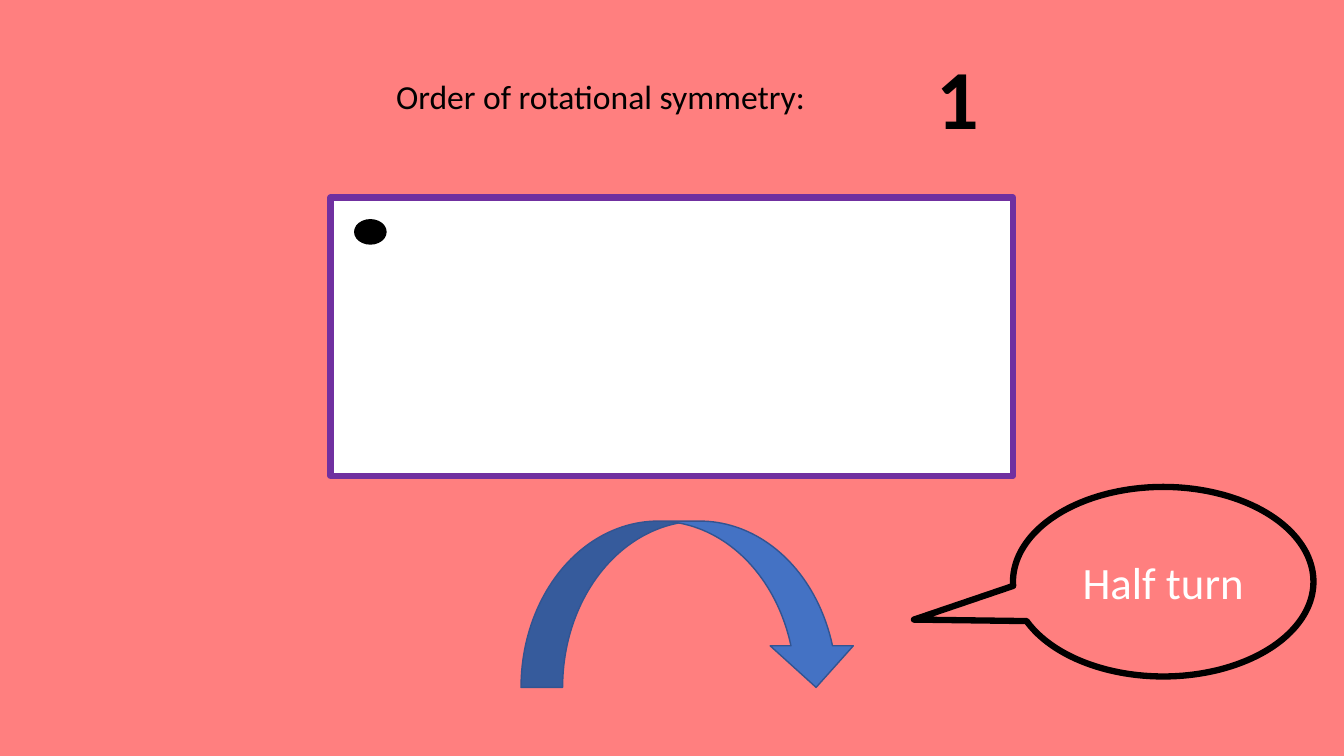
"""Build a slide on the order of rotational symmetry of a marked rectangle."""
from dataclasses import dataclass

import pptx
import pptx.dml.color
import pptx.enum.shapes
import pptx.enum.text
import pptx.util

Pt = pptx.util.Pt
SHAPE = pptx.enum.shapes.MSO_SHAPE
ALIGN = pptx.enum.text.PP_ALIGN
ANCHOR = pptx.enum.text.MSO_ANCHOR


@dataclass(frozen=True)
class Theme:
    font: str = "Calibri"
    background: str = "FF7F7F"
    ink: str = "000000"
    paper: str = "FFFFFF"
    border: str = "7030A0"
    arrow: str = "4472C4"
    arrow_edge: str = "325491"
    label_size: int = 24
    callout_size: int = 32
    answer_size: int = 60
    thin: float = 1
    thick: float = 4.5


def rgb(code):
    return pptx.dml.color.RGBColor.from_string(code)


class SlideBuilder:
    def __init__(self, slide, theme):
        self.slide = slide
        self.theme = theme
        fill = slide.background.fill
        fill.solid()
        fill.fore_color.rgb = rgb(theme.background)

    def group(self):
        return self.slide.shapes.add_group_shape().shapes

    def shape(self, kind, box, fill, edge, weight, parent=None):
        holder = self.slide.shapes if parent is None else parent
        shape = holder.add_shape(kind, *map(Pt, box))
        shape.shadow.inherit = False
        if fill is None:
            shape.fill.background()
        else:
            shape.fill.solid()
            shape.fill.fore_color.rgb = rgb(fill)
        shape.line.color.rgb = rgb(edge)
        shape.line.width = Pt(weight)
        return shape

    def add_words(self, frame, words, size, color, bold=False, align=ALIGN.LEFT):
        frame.word_wrap = True
        paragraph = frame.paragraphs[0]
        paragraph.alignment = align
        run = paragraph.add_run()
        run.text = words
        run.font.name = self.theme.font
        run.font.size = Pt(size)
        run.font.bold = bold
        run.font.color.rgb = rgb(color)

    def text(self, box, words, size, bold=False):
        frame = self.slide.shapes.add_textbox(*map(Pt, box)).text_frame
        self.add_words(frame, words, size, self.theme.ink, bold)
        frame.auto_size = pptx.enum.text.MSO_AUTO_SIZE.SHAPE_TO_FIT_TEXT

    def callout(self, box, words, tip):
        theme = self.theme
        bubble = self.shape(SHAPE.OVAL_CALLOUT, box, None, theme.ink, theme.thick)
        for index, offset in enumerate(tip):
            bubble.adjustments[index] = offset
        bubble.text_frame.vertical_anchor = ANCHOR.MIDDLE
        self.add_words(bubble.text_frame, words, theme.callout_size, theme.paper,
                       align=ALIGN.CENTER)


def main():
    deck = pptx.Presentation()
    deck.slide_width, deck.slide_height = Pt(960), Pt(540)
    theme = Theme()
    builder = SlideBuilder(deck.slides.add_slide(deck.slide_layouts[6]), theme)

    card = builder.group()
    builder.shape(SHAPE.RECTANGLE, (236.2, 141.1, 487.4, 198.7),
                  theme.paper, theme.border, theme.thick, card)
    builder.shape(SHAPE.OVAL, (253.4, 157, 22.3, 17.3),
                  theme.ink, theme.ink, theme.thin, card)

    builder.text((661.7, 28.8, 76.3, 79.9), "1", theme.answer_size, bold=True)
    builder.text((275.8, 50.4, 385.2, 36), "Order of rotational symmetry:", theme.label_size)

    builder.shape(SHAPE.CURVED_DOWN_ARROW, (372.2, 372.2, 240.5, 118.8),
                  theme.arrow, theme.arrow_edge, theme.thin)
    builder.callout((723.6, 347.8, 214.6, 135.4), "Half turn", (-0.83, 0.2))

    deck.save("out.pptx")


if __name__ == "__main__":
    main()
